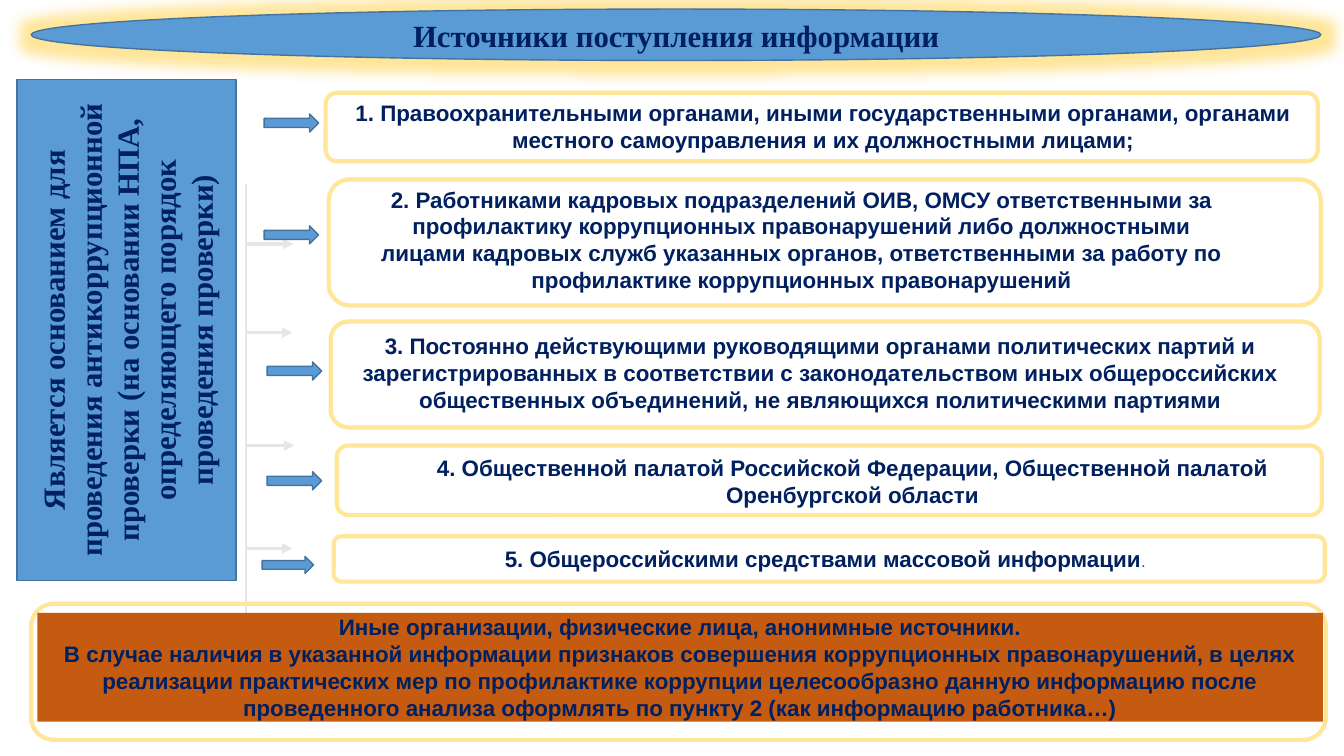
from lxml import etree
from pptx import Presentation
from pptx.dml.color import RGBColor
from pptx.enum.shapes import MSO_CONNECTOR as CONN, MSO_SHAPE as SHAPE
from pptx.enum.text import MSO_ANCHOR as ANCHOR, PP_ALIGN as ALIGN
from pptx.oxml.ns import qn
from pptx.util import Emu, Pt

PX = 9144  # 100 px to the inch
BLUE, BLUE_EDGE, NAVY = "5B9BD5", "43739E", "002060"
CREAM, GREY, ORANGE, DOT_BLUE = "FFE699", "E7E6E6", "C55A11", "1F4E79"
SERIF, SANS = "Times New Roman", "Arial"

# Text, frame box, text box, arrow box
SOURCES = [
    ("1. Правоохранительными органами, иными государственными органами, "
     "органами местного самоуправления и их должностными лицами;",
     (323, 92, 984, 68), (328, 98, 977, 54), (262, 113, 54, 18)),
    ("2. Работниками кадровых подразделений ОИВ, ОМСУ ответственными за "
     "профилактику коррупционных правонарушений либо должностными лицами "
     "кадровых служб указанных органов, ответственными за работу по "
     "профилактике коррупционных правонарушений",
     (326, 178, 984, 125), (366, 182, 858, 111), (262, 224, 54, 18)),
    ("3. Постоянно действующими руководящими органами политических партий и "
     "зарегистрированных в соответствии с законодательством иных "
     "общероссийских общественных объединений, не являющихся политическими "
     "партиями",
     (328, 319, 981, 105), (339, 329, 949, 81), (265, 359, 54, 18)),
    ("4. Общественной палатой Российской Федерации, Общественной палатой "
     "Оренбургской области",
     (334, 442, 977, 69), (375, 450, 941, 54), (265, 468, 54, 18)),
    ("5. Общероссийскими средствами массовой информации",
     (331, 532, 983, 45), (338, 541, 961, 27), (260, 552, 51, 17)),
]
# Left end and height of each grey pointer
POINTERS = [(244, 242), (243, 330), (245, 442), (243, 544)]
BASIS = ("Является основанием для проведения антикоррупционной проверки "
         "(на основании НПА, определяющего порядок проведения проверки)")
OTHERS = [
    "Иные организации, физические лица, анонимные источники.",
    "В случае наличия в указанной информации признаков совершения "
    "коррупционных правонарушений, в целях реализации практических мер по "
    "профилактике коррупции целесообразно данную информацию после "
    "проведенного анализа оформлять по пункту 2 (как информацию работника…)",
]


def px(*values):
    return [Emu(v * PX) for v in values]


def rgb(color):
    return RGBColor.from_string(color)


def add_box(slide, kind, box, fill=None, line=None, width=1):
    sp = slide.shapes.add_shape(kind, *px(*box))
    sp.shadow.inherit = False
    if fill:
        sp.fill.solid()
        sp.fill.fore_color.rgb = rgb(fill)
    else:
        sp.fill.background()
    if line:
        sp.line.color.rgb = rgb(line)
        sp.line.width = Pt(width)
    else:
        sp.line.fill.background()
    return sp


def format_run(r, font, size, color=NAVY, bold=True):
    r.font.name, r.font.size, r.font.bold = font, Pt(size), bold
    r.font.color.rgb = rgb(color)


def write(sp, paragraphs, font, size, inset=True):
    tf = sp.text_frame
    tf.word_wrap = True
    tf.vertical_anchor = ANCHOR.MIDDLE
    if not inset:
        tf.margin_left = tf.margin_top = tf.margin_right = tf.margin_bottom = 0
    tf.text = "\n".join(paragraphs)
    for p in tf.paragraphs:
        p.alignment = ALIGN.CENTER
        for r in p.runs:
            format_run(r, font, size)
    return tf


def add_line(slide, x1, y1, x2, y2, width, arrow=False):
    cn = slide.shapes.add_connector(CONN.STRAIGHT, *px(x1, y1, x2, y2))
    cn.line.color.rgb = rgb(GREY)
    cn.line.width = Pt(width)
    if arrow:
        etree.SubElement(cn.line._get_or_add_ln(), qn("a:tailEnd"), type="triangle")
    etree.SubElement(cn._element.spPr, qn("a:effectLst"))


def add_title(slide, box):
    sp = add_box(slide, SHAPE.OVAL, box, BLUE, BLUE_EDGE)
    # Soft golden glow
    effects = sp._element.spPr.find(qn("a:effectLst"))
    glow = etree.SubElement(effects, qn("a:glow"), rad=str(18 * 12700))
    color = etree.SubElement(glow, qn("a:srgbClr"), val="FFC000")
    etree.SubElement(color, qn("a:alpha"), val="40000")
    write(sp, ["Источники поступления информации"], SERIF, 22)


def add_basis(slide, box):
    sp = add_box(slide, SHAPE.RECTANGLE, box, BLUE, BLUE_EDGE)
    tf = write(sp, [BASIS], SERIF, 22)
    tf._txBody.bodyPr.set("vert", "vert270")


def add_pointers(slide, x, top, bottom):
    add_line(slide, x, bottom, x, top, 1.5)
    for left, y in POINTERS:
        add_line(slide, left, y, left + 47, y, 2.5, arrow=True)


def add_source(slide, text, frame, text_box, arrow):
    add_box(slide, SHAPE.ROUNDED_RECTANGLE, frame, line=CREAM, width=3)
    tb = slide.shapes.add_textbox(*px(*text_box))
    add_box(slide, SHAPE.RIGHT_ARROW, arrow, BLUE, BLUE_EDGE)
    return write(tb, [text], SANS, 16, inset=False)


def add_others(slide, box):
    x, y, w, h = box
    add_box(slide, SHAPE.ROUNDED_RECTANGLE, box, line=CREAM, width=3)
    panel = add_box(slide, SHAPE.RECTANGLE, (x + 6, y + 9, w - 9, h - 27), ORANGE)
    write(panel, OTHERS, SANS, 16, inset=False)


def main():
    prs = Presentation()
    prs.slide_width, prs.slide_height = px(1333, 750)
    slide = prs.slides.add_slide(prs.slide_layouts[6])
    add_pointers(slide, 244, 183, 640)
    for source in SOURCES:
        tf = add_source(slide, *source)
    # The last source ends in a small, light full stop
    r = tf.paragraphs[0].add_run()
    r.text = "."
    format_run(r, SANS, 12, DOT_BLUE, bold=False)
    add_title(slide, (31, 9, 1279, 51))
    add_basis(slide, (17, 79, 217, 497))
    add_others(slide, (31, 599, 1284, 135))
    prs.save("out.pptx")


if __name__ == "__main__":
    main()
